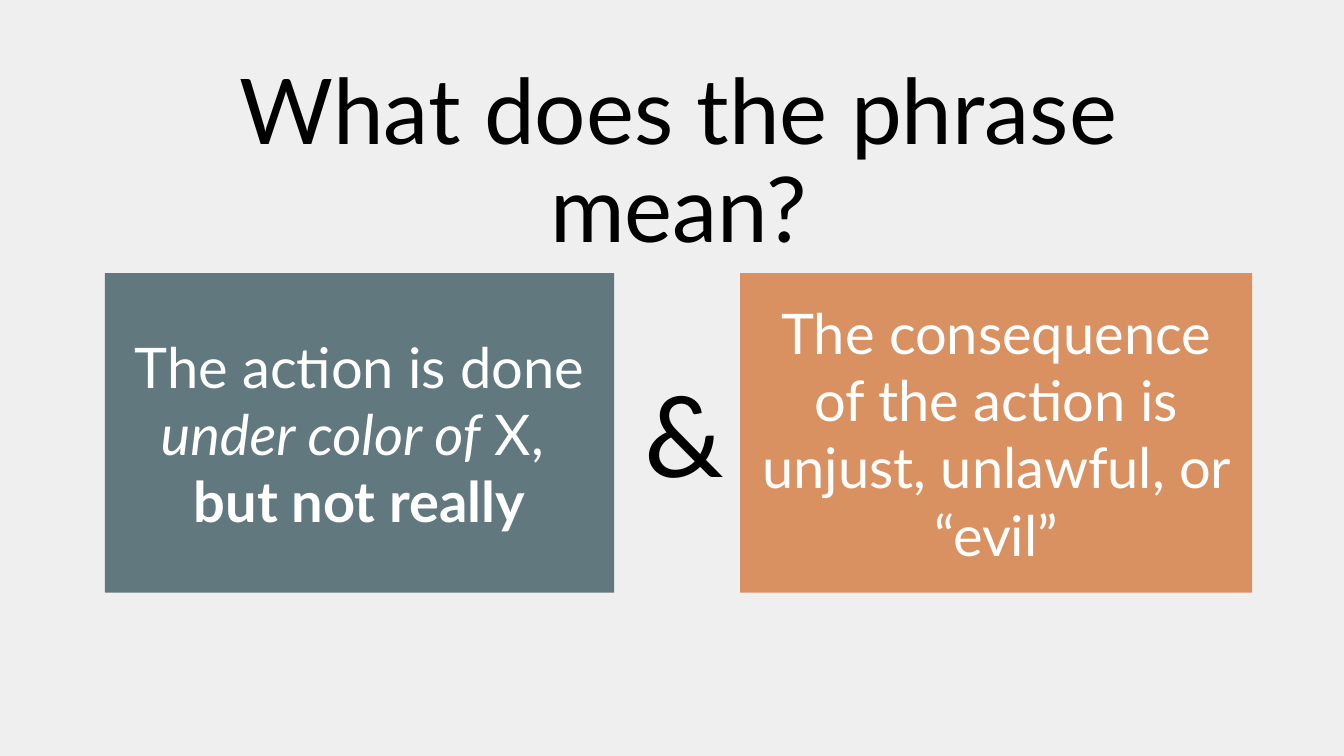
from dataclasses import dataclass

from pptx import Presentation
from pptx import util as u
from pptx.dml import color as col
from pptx.enum import shapes as sh
from pptx.enum import text as tx
from pptx.shapes.base import BaseShape
from pptx.slide import Slide


@dataclass(frozen=True)
class Theme:
    font: str = "Lato"
    back: str = "EFEFEF"
    ink: str = "000000"
    light: str = "FFFFFF"
    teal: str = "60787E"
    rust: str = "D99162"
    title: float = 64.8
    sign: float = 80
    body: float = 40


@dataclass(frozen=True)
class Span:
    text: str
    bold: bool = False
    slant: bool = False


@dataclass(frozen=True)
class Block:
    left: float
    top: float
    width: float
    height: float
    lines: list[list[Span]]
    size: float
    ink: str
    fill: str | None = None
    wrap: bool = True
    space: float = 1.0


THEME = Theme()


def rgb(code: str) -> col.RGBColor:
    return col.RGBColor.from_string(code)


def write(shape: BaseShape, block: Block) -> None:
    frame = shape.text_frame
    frame.word_wrap = block.wrap
    frame.vertical_anchor = tx.MSO_ANCHOR.MIDDLE
    for i, line in enumerate(block.lines):
        para = frame.add_paragraph() if i else frame.paragraphs[0]
        para.alignment = tx.PP_ALIGN.CENTER
        para.line_spacing = block.space
        for span in line:
            run = para.add_run()
            run.text = span.text
            font = run.font
            font.name = THEME.font
            font.size = u.Pt(block.size)
            font.color.rgb = rgb(block.ink)
            font.bold = span.bold
            font.italic = span.slant


def draw(slide: Slide, block: Block) -> None:
    area = [u.Inches(n) for n in (block.left, block.top, block.width, block.height)]
    if block.fill:
        shape = slide.shapes.add_shape(sh.MSO_SHAPE.RECTANGLE, *area)
        shape.shadow.inherit = False
        shape.fill.solid()
        shape.fill.fore_color.rgb = rgb(block.fill)
        shape.line.fill.background()
    else:
        shape = slide.shapes.add_textbox(*area)
    write(shape, block)


# Two claims, the sign between them, and the title
BLOCKS = [
    Block(1.04, 2.71, 5.05, 3.17,
          [[Span("The action is done "), Span("under color of", slant=True), Span(" X, ")],
           [Span("but not really", bold=True)]],
          THEME.body, THEME.light, THEME.teal),
    Block(7.34, 2.71, 5.08, 3.17,
          [[Span("The consequence of the action is unjust, unlawful, or “evil”")]],
          THEME.body, THEME.light, THEME.rust),
    Block(6.29, 3.57, 0.89, 1.45, [[Span("&")]],
          THEME.sign, THEME.ink, wrap=False),
    Block(0.98, 0.9, 11.5, 1.45, [[Span("What does the phrase mean?")]],
          THEME.title, THEME.ink, space=0.9),
]


def main() -> None:
    deck = Presentation()
    deck.slide_width = u.Inches(13.33)
    deck.slide_height = u.Inches(7.5)
    slide = deck.slides.add_slide(deck.slide_layouts[6])

    # Background
    slide.background.fill.solid()
    slide.background.fill.fore_color.rgb = rgb(THEME.back)

    for block in BLOCKS:
        draw(slide, block)
    deck.save("out.pptx")


if __name__ == "__main__":
    main()
